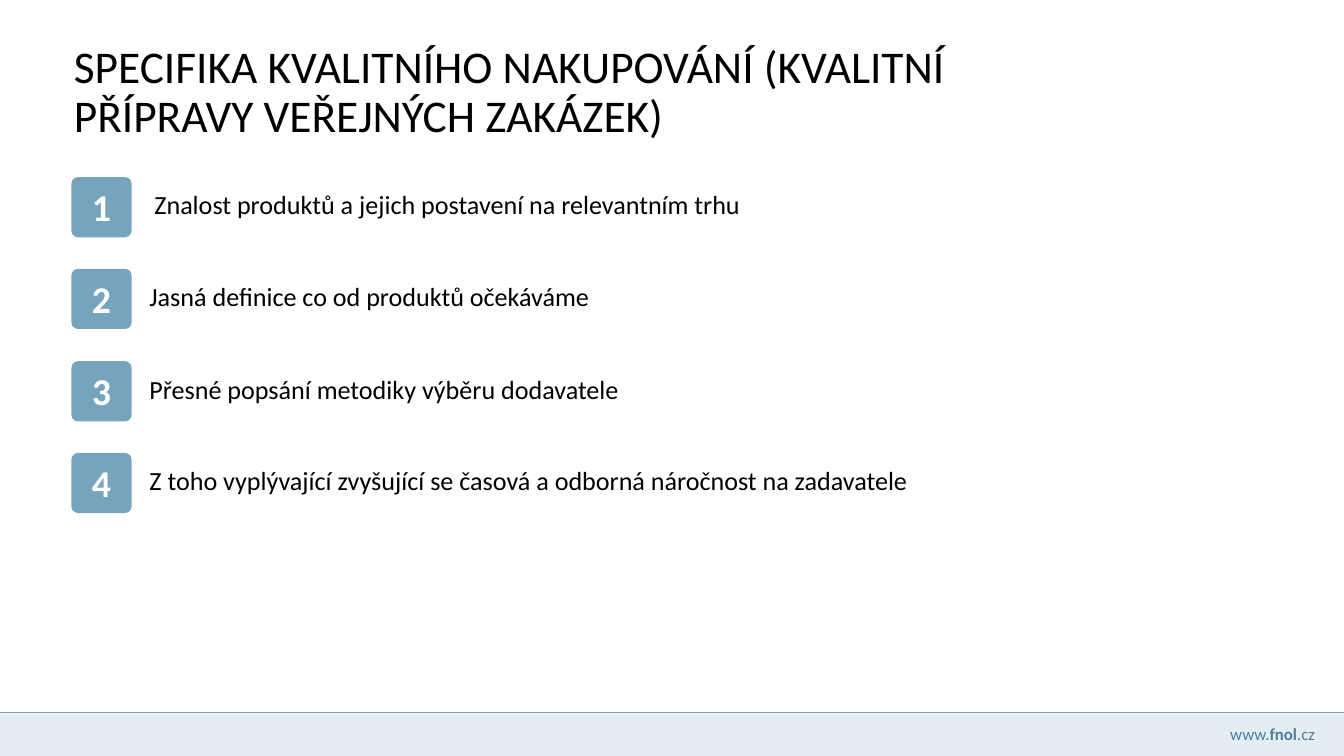
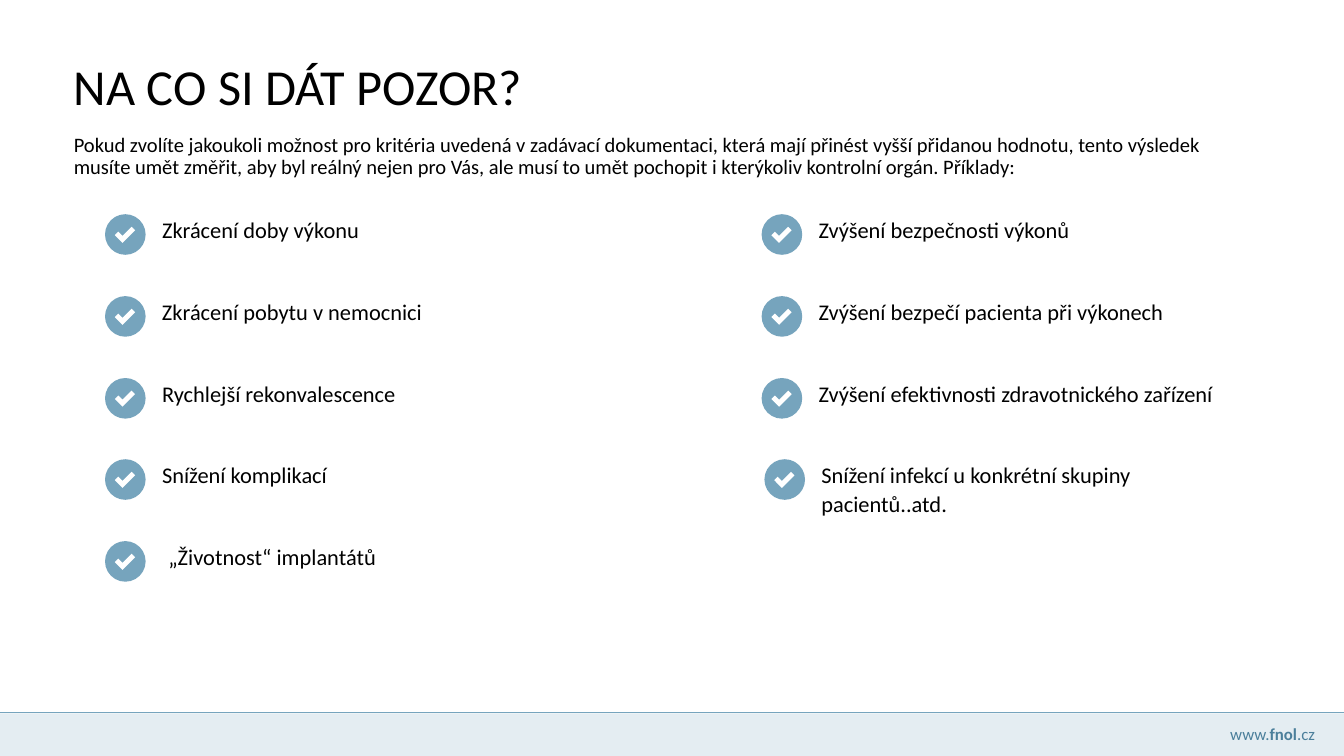
import pptx
import pptx.dml.color
import pptx.enum.shapes
import pptx.enum.text
import pptx.util
from lxml import etree

EMU_PER_PX = 9525
WIDTH, HEIGHT = 1920, 1080
FONT = "Calibri"
COLORS = {
    "paper": "FFFFFF",
    "text": "000000",
    "accent": "76A4BD",
    "band": "E4EDF2",
    "link": "4B7F9B",
}
ALIGN = pptx.enum.text.PP_ALIGN
ANCHOR = pptx.enum.text.MSO_ANCHOR
SHAPE = pptx.enum.shapes.MSO_SHAPE
DRAWING = "http://schemas.openxmlformats.org/drawingml/2006/main"

BADGE = 86
CIRCLE = 58
CHECK_POINTS = [(24, 0), (11, 13), (5, 7), (0, 12), (11, 23), (29, 5)]

# Numbered points: text left, text width, wording
POINTS = [
    (211, 1565, "Znalost produktů a jejich postavení na relevantním trhu"),
    (204, 674, "Jasná definice co od produktů očekáváme"),
    (204, 711, "Přesné popsání metodiky výběru dodavatele"),
    (204, 1293, "Z toho vyplývající zvyšující se časová a odborná náročnost na zadavatele"),
]

# Checked examples: row, circle left, gap to text, text width, wording
EXAMPLES = [
    (0, 150, 72, 381, "Zkrácení doby výkonu"),
    (1, 150, 72, 397, "Zkrácení pobytu v nemocnici"),
    (2, 150, 72, 381, "Rychlejší rekonvalescence"),
    (3, 150, 72, 381, "Snížení komplikací"),
    (4, 150, 81, 381, "„Životnost“ implantátů"),
    (0, 1088, 72, 381, "Zvýšení bezpečnosti výkonů"),
    (1, 1088, 72, 526, "Zvýšení bezpečí pacienta při výkonech"),
    (2, 1088, 72, 656, "Zvýšení efektivnosti zdravotnického zařízení"),
    (3, 1092, 72, 616, "Snížení infekcí u konkrétní skupiny pacientů..atd."),
]

INTRO = (
    "Pokud zvolíte jakoukoli možnost pro kritéria uvedená v zadávací dokumentaci, "
    "která mají přinést vyšší přidanou hodnotu, tento výsledek musíte umět změřit, "
    "aby byl reálný nejen pro Vás, ale musí to umět pochopit i kterýkoliv kontrolní "
    "orgán. Příklady:"
)


def px(*lengths):
    return [pptx.util.Emu(length * EMU_PER_PX) for length in lengths]


def rgb(name):
    return pptx.dml.color.RGBColor.from_string(COLORS[name])


def even_tops(first, last, count):
    return [round(first + (last - first) * i / (count - 1)) for i in range(count)]


def write(frame, spans, size, color="text", align=ALIGN.LEFT, spacing=None):
    """Fill the first paragraph with (wording, bold) spans."""
    para = frame.paragraphs[0]
    para.alignment = align
    para.line_spacing = spacing
    for wording, bold in spans:
        span = para.add_run()
        span.text = wording
        span.font.name = FONT
        span.font.size = pptx.util.Pt(size)
        span.font.bold = bold
        span.font.color.rgb = rgb(color)


def add_text(shapes, area, spans, size, anchor=ANCHOR.TOP, **style):
    frame = shapes.add_textbox(*px(*area)).text_frame
    frame.word_wrap = True
    frame.vertical_anchor = anchor
    write(frame, spans, size, **style)


def paint(shape, color):
    shape.shadow.inherit = False
    shape.fill.solid()
    shape.fill.fore_color.rgb = rgb(color)
    shape.line.fill.background()
    return shape


def add_block(shapes, kind, area, color):
    return paint(shapes.add_shape(kind, *px(*area)), color)


def add_page(deck, title, area, size):
    page = deck.slides.add_slide(deck.slide_layouts[5])
    page.background.fill.solid()
    page.background.fill.fore_color.rgb = rgb("paper")
    holder = page.shapes.title
    holder.left, holder.top, holder.width, holder.height = px(*area)
    frame = holder.text_frame
    frame.word_wrap = True
    frame.auto_size = pptx.enum.text.MSO_AUTO_SIZE.NONE
    frame.vertical_anchor = ANCHOR.MIDDLE
    write(frame, [(title, False)], size, spacing=0.9)
    return page


def add_footer(page):
    shapes = page.shapes.add_group_shape().shapes
    add_block(shapes, SHAPE.RECTANGLE, (0, 1019, WIDTH, 61), "band")
    address = [("www.", False), ("fnol", True), (".cz", False)]
    add_text(shapes, (1664, 1029, 224, 38), address, 18, color="link", align=ALIGN.RIGHT)
    rule = shapes.add_connector(
        pptx.enum.shapes.MSO_CONNECTOR.STRAIGHT, *px(0, 1018, WIDTH, 1018))
    rule.line.color.rgb = rgb("accent")
    rule.line.width = pptx.util.Pt(1.5)
    etree.SubElement(rule._element.spPr, f"{{{DRAWING}}}effectLst")


def add_numbered_point(page, number, top, text_left, text_width, wording):
    shapes = page.shapes.add_group_shape().shapes
    badge = add_block(shapes, SHAPE.ROUNDED_RECTANGLE, (102, top, BADGE, BADGE), "accent")
    badge.adjustments[0] = 0.11
    frame = badge.text_frame
    frame.margin_left, frame.margin_top, frame.margin_right, frame.margin_bottom = px(14, 7, 14, 7)
    frame.vertical_anchor = ANCHOR.TOP
    write(frame, [(str(number), True)], 40.5, color="paper", align=ALIGN.CENTER)
    add_text(shapes, (text_left, top + 12, text_width, 55), [(wording, False)], 28)


def add_checked_example(page, left, top, gap, text_width, wording):
    shapes = page.shapes.add_group_shape().shapes
    add_block(shapes, SHAPE.OVAL, (left, top, CIRCLE, CIRCLE), "accent")
    builder = shapes.build_freeform(*CHECK_POINTS[0], scale=EMU_PER_PX)
    builder.add_line_segments(CHECK_POINTS[1:], close=True)
    paint(builder.convert_to_shape(*px(left + 14, top + 18)), "paper")
    add_text(shapes, (left + gap, top - 6, text_width, 86), [(wording, False)], 24, spacing=1.1)


def main():
    deck = pptx.Presentation()
    deck.slide_width, deck.slide_height = px(WIDTH, HEIGHT)

    # Numbered points
    page = add_page(
        deck, "SPECIFIKA KVALITNÍHO NAKUPOVÁNÍ (KVALITNÍ PŘÍPRAVY VEŘEJNÝCH ZAKÁZEK)",
        (96, 79, 1509, 108), 48.6)
    tops = even_tops(253, 647, len(POINTS))
    for number, (top, point) in enumerate(zip(tops, POINTS), 1):
        add_numbered_point(page, number, top, *point)
    add_footer(page)

    # Two columns of checked examples
    page = add_page(deck, "NA CO SI DÁT POZOR?", (96, 80, 1695, 96), 54)
    tops = even_tops(306, 773, 5)
    for row, left, *rest in EXAMPLES:
        add_checked_example(page, left, tops[row], *rest)
    add_footer(page)
    add_text(page.shapes, (96, 176, 1695, 96), [(INTRO, False)], 22,
             anchor=ANCHOR.MIDDLE, spacing=0.9)

    deck.save("out.pptx")


if __name__ == "__main__":
    main()
